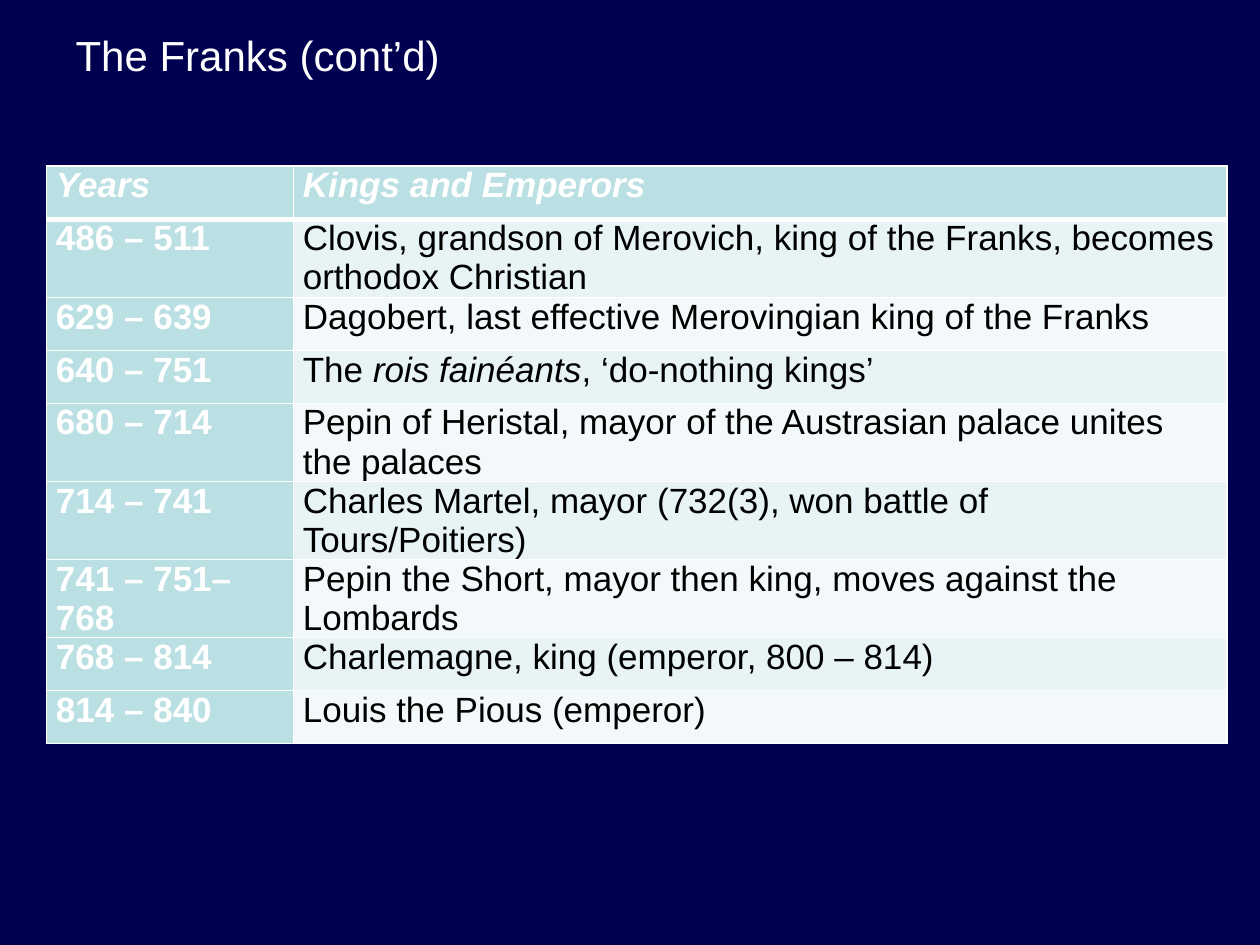
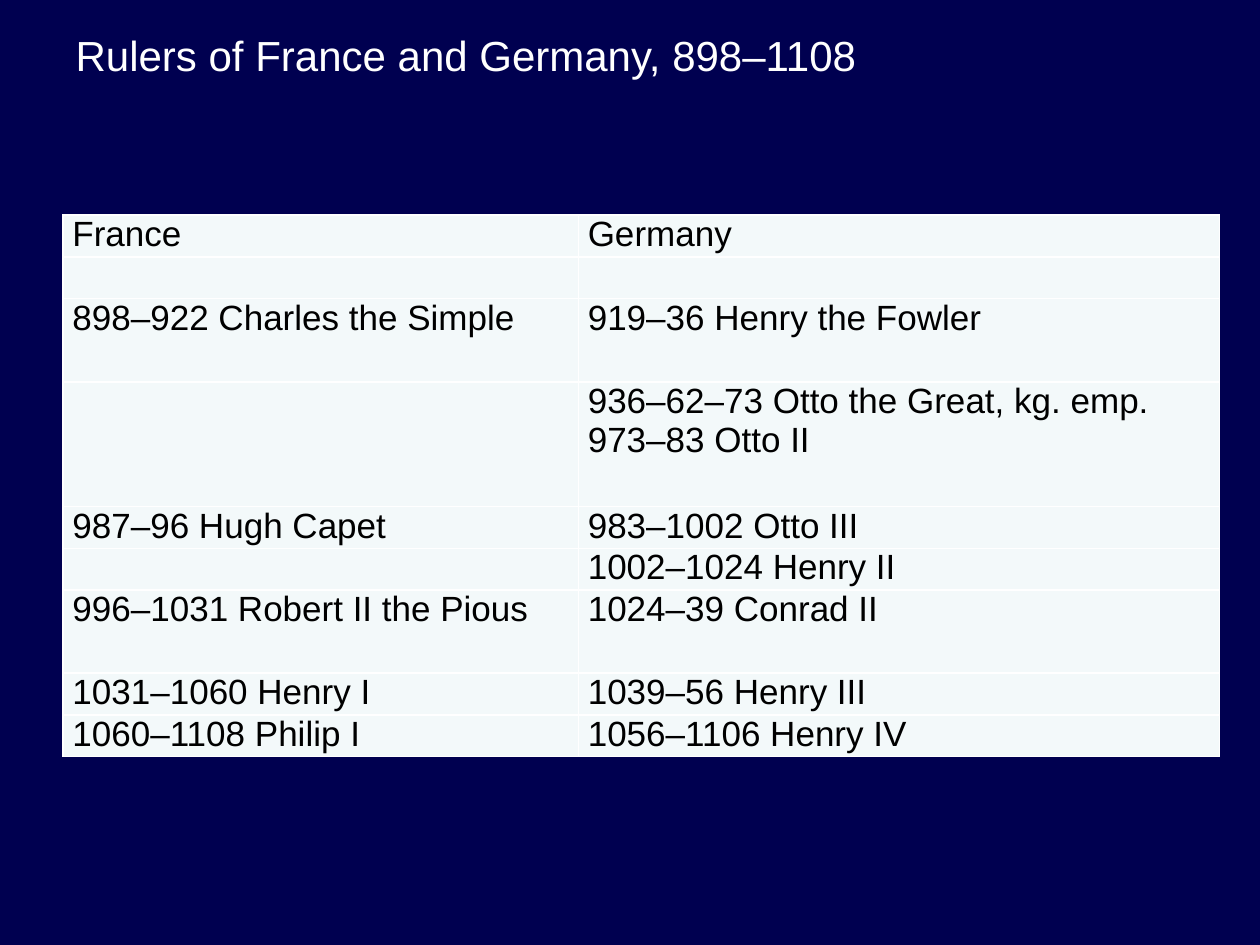
from dataclasses import dataclass

from lxml.etree import SubElement
from pptx import Presentation
from pptx.dml.color import RGBColor
from pptx.enum.text import MSO_ANCHOR, PP_ALIGN
from pptx.oxml.ns import qn
from pptx.presentation import Presentation as Deck
from pptx.slide import Slide
from pptx.table import _Cell as Cell
from pptx.text.text import _Paragraph as Paragraph
from pptx.util import Length, Pt

NAVY = RGBColor(0x00, 0x00, 0x50)
WHITE = RGBColor(0xFF, 0xFF, 0xFF)
BLACK = RGBColor(0x00, 0x00, 0x00)
TEAL = RGBColor(0xBB, 0xE0, 0xE3)
BAND = RGBColor(0xE7, 0xF3, 0xF4)
PALE = RGBColor(0xF3, 0xF9, 0xFA)

FONT = "Arial"
TITLE_ONLY = 5
THIN, THICK = Pt(1), Pt(3)
LINE_HEIGHT = 23.8


@dataclass(frozen=True)
class CellStyle:
    fill: RGBColor
    color: RGBColor = BLACK
    bold: bool = False
    italic: bool = False


@dataclass(frozen=True)
class RulerTable:
    """Rows of text; *stars* switch italics, and a header style is optional."""
    title: str
    left: Length
    top: Length
    widths: tuple[Length, ...]
    heights: tuple[Length, ...]
    rows: tuple[tuple[str, ...], ...]
    emphasised: bool


HEADER = CellStyle(TEAL, WHITE, bold=True, italic=True)
YEARS = CellStyle(TEAL, WHITE, bold=True)
BANDED = CellStyle(BAND)
PLAIN = CellStyle(PALE)

FRANKS = RulerTable(
    title="The Franks (cont’d)",
    left=Pt(26.6),
    top=Pt(95),
    widths=(Pt(141.1), Pt(533.5)),
    heights=(Pt(30.3),) * 9,
    rows=(
        ("Years", "Kings and Emperors"),
        ("486 – 511", "Clovis, grandson of Merovich, king of the Franks, "
                      "becomes orthodox Christian"),
        ("629 – 639", "Dagobert, last effective Merovingian king of the Franks"),
        ("640 – 751", "The *rois fainéants*, ‘do-nothing kings’"),
        ("680 – 714", "Pepin of Heristal, mayor of the Austrasian palace "
                      "unites the palaces"),
        ("714 – 741", "Charles Martel, mayor (732(3), won battle of Tours/Poitiers)"),
        ("741 – 751– 768", "Pepin the Short, mayor then king, moves against "
                           "the Lombards"),
        ("768 – 814", "Charlemagne, king (emperor, 800 – 814)"),
        ("814 – 840", "Louis the Pious (emperor)"),
    ),
    emphasised=True,
)

FRANCE_AND_GERMANY = RulerTable(
    title="Rulers of France and Germany, 898–1108",
    left=Pt(36),
    top=Pt(123),
    widths=(Pt(294.5), Pt(366.5)),
    heights=tuple(Pt(LINE_HEIGHT * lines) for lines in (1, 1, 2, 3, 1, 1, 2, 1, 1)),
    rows=(
        ("France", "Germany"),
        ("", ""),
        ("898–922 Charles the Simple", "919–36 Henry the Fowler"),
        ("", "936–62–73 Otto the Great, kg. emp.\n973–83 Otto II"),
        ("987–96 Hugh Capet", "983–1002 Otto III"),
        ("", "1002–1024 Henry II"),
        ("996–1031 Robert II the Pious", "1024–39 Conrad II"),
        ("1031–1060 Henry I", "1039–56 Henry III"),
        ("1060–1108 Philip I", "1056–1106 Henry IV"),
    ),
    emphasised=False,
)


def apply(target: object, formats: dict[str, object]) -> None:
    for name, value in formats.items():
        setattr(target, name, value)


def add_span(para: Paragraph, text: str, size: Length, style: CellStyle,
             italic: bool = False) -> None:
    span = para.add_run()
    span.text = text
    apply(span.font, {"name": FONT, "size": size, "bold": style.bold,
                      "italic": style.italic or italic})
    span.font.color.rgb = style.color


def write_cell(cell: Cell, text: str, style: CellStyle) -> None:
    apply(cell, {"margin_left": Pt(5.4), "margin_right": Pt(5.4),
                 "margin_top": 0, "margin_bottom": 0,
                 "vertical_anchor": MSO_ANCHOR.TOP})
    cell.fill.solid()
    cell.fill.fore_color.rgb = style.fill
    para = cell.text_frame.paragraphs[0]
    for line_number, line in enumerate(text.splitlines()):
        if line_number:
            para.add_line_break()
        for part_number, part in enumerate(line.split("*")):
            add_span(para, part, Pt(20), style, italic=part_number % 2 == 1)


def set_borders(cell: Cell, top: Length, bottom: Length) -> None:
    properties = cell._tc.get_or_add_tcPr()
    sides = {"a:lnL": THIN, "a:lnR": THIN, "a:lnT": top, "a:lnB": bottom}
    for position, (tag, width) in enumerate(sides.items()):
        line = SubElement(properties, qn(tag), w=str(int(width)))
        fill = SubElement(line, qn("a:solidFill"))
        SubElement(fill, qn("a:srgbClr"), val=str(WHITE))
        properties.insert(position, line)


def pick_style(row: int, column: int, emphasised: bool) -> CellStyle:
    if not emphasised:
        return PLAIN
    if row == 0:
        return HEADER
    if column == 0:
        return YEARS
    return BANDED if row % 2 else PLAIN


def add_title(page: Slide, text: str) -> None:
    box = page.shapes.title
    apply(box, {"left": Pt(36), "top": Pt(9.4), "width": Pt(684), "height": Pt(44)})
    apply(box.text_frame, {"vertical_anchor": MSO_ANCHOR.MIDDLE, "word_wrap": True})
    para = box.text_frame.paragraphs[0]
    para.alignment = PP_ALIGN.LEFT
    add_span(para, text, Pt(24), CellStyle(NAVY, WHITE))


def add_ruler_table(page: Slide, rulers: RulerTable) -> None:
    table = page.shapes.add_table(
        len(rulers.rows), len(rulers.widths), rulers.left, rulers.top,
        sum(rulers.widths), sum(rulers.heights)).table
    apply(table, {"first_row": False, "horz_banding": False})
    for column, width in zip(table.columns, rulers.widths):
        column.width = width
    for row, height in zip(table.rows, rulers.heights):
        row.height = height
    for row_number, texts in enumerate(rulers.rows):
        for column_number, text in enumerate(texts):
            cell = table.cell(row_number, column_number)
            write_cell(cell, text, pick_style(row_number, column_number,
                                              rulers.emphasised))
            under_header = rulers.emphasised and row_number == 1
            is_header = rulers.emphasised and row_number == 0
            set_borders(cell, top=THICK if under_header else THIN,
                        bottom=THICK if is_header else THIN)


def add_ruler_page(deck: Deck, rulers: RulerTable) -> None:
    page = deck.slides.add_slide(deck.slide_layouts[TITLE_ONLY])
    add_title(page, rulers.title)
    add_ruler_table(page, rulers)


def main() -> None:
    deck = Presentation()
    apply(deck, {"slide_width": Pt(720), "slide_height": Pt(540)})
    backdrop = deck.slide_master.background.fill
    backdrop.solid()
    backdrop.fore_color.rgb = NAVY
    for rulers in (FRANKS, FRANCE_AND_GERMANY):
        add_ruler_page(deck, rulers)
    deck.save("out.pptx")


if __name__ == "__main__":
    main()
